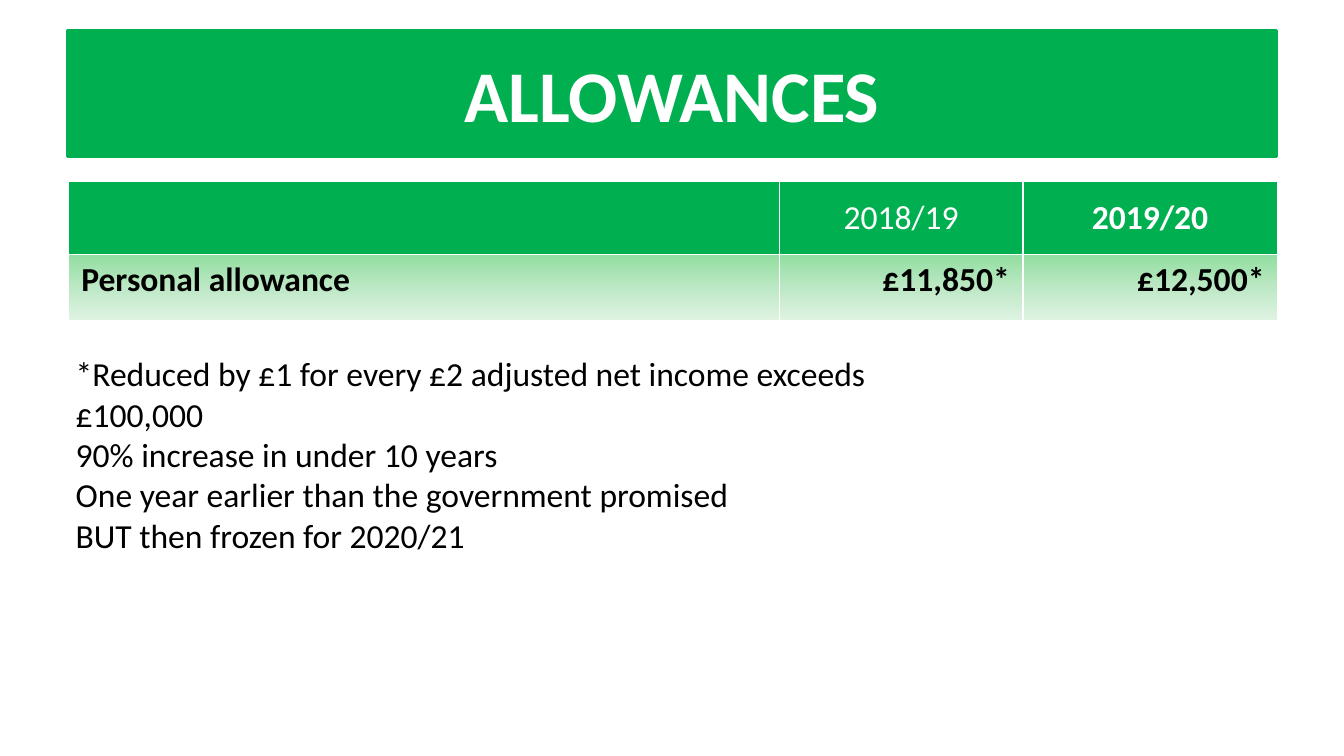
from pptx import Presentation
from pptx import util as u
from pptx.dml.color import RGBColor
from pptx.enum import text
from pptx.oxml import parse_xml
from pptx.oxml.ns import nsdecls, qn

PX = 4572  # EMU in one px, 200 px to the inch
FONT = "Calibri"
COLORS = {
    "green": "00B050",
    "white": "FFFFFF",
    "black": "000000",
    "fade_top": "91DEA0",
    "fade_mid": "BDE8C5",
    "fade_end": "DFF3E3",
}
FADE = [(0, "fade_top"), (50, "fade_mid"), (100, "fade_end")]
LEFT, CENTER, RIGHT = (text.PP_ALIGN.LEFT, text.PP_ALIGN.CENTER,
                       text.PP_ALIGN.RIGHT)
MIDDLE, TOP = text.MSO_ANCHOR.MIDDLE, text.MSO_ANCHOR.TOP

COL_WIDTHS = [1058, 362, 379]
ROW_HEIGHTS = [109, 98]
# Each cell: words, bold, alignment
ALLOWANCES = [
    [("", False, CENTER), ("2018/19", False, CENTER), ("2019/20", True, CENTER)],
    [("Personal allowance", True, LEFT), ("£11,850*", True, RIGHT),
     ("£12,500*", True, RIGHT)],
]
NOTES = [
    "*Reduced by £1 for every £2 adjusted net income exceeds £100,000",
    "90% increase in under 10 years",
    "One year earlier than the government promised",
    "BUT then frozen for 2020/21",
]


def px(n):
    return u.Emu(n * PX)


def rgb(name):
    return RGBColor.from_string(COLORS[name])


def set_all(obj, values):
    for name, value in values.items():
        setattr(obj, name, value)


def write(p, words, size, color, bold=False, align=LEFT):
    p.alignment = align
    if words:
        r = p.add_run()
        r.text = words
        set_all(r.font, {"name": FONT, "size": u.Pt(size), "bold": bold})
        r.font.color.rgb = rgb(color)


def add_title(s, words):
    sp = s.shapes.title
    set_all(sp, {"left": px(100), "top": px(46), "width": px(1800),
                 "height": px(187)})
    # Slightly rounded banner outline
    sp.element.spPr.find(qn("a:xfrm")).addnext(parse_xml(
        f'<a:prstGeom {nsdecls("a")} prst="roundRect"><a:avLst>'
        '<a:gd name="adj" fmla="val 1500"/></a:avLst></a:prstGeom>'))
    sp.fill.solid()
    sp.fill.fore_color.rgb = rgb("green")
    sp.line.color.rgb = rgb("green")
    sp.line.width = u.Pt(1.5)
    sp.text_frame.vertical_anchor = MIDDLE
    write(sp.text_frame.paragraphs[0], words, 39, "white", True, CENTER)


def add_borders(cell):
    for side in "LRTB":
        cell._tc.get_or_add_tcPr().append(parse_xml(
            f'<a:ln{side} {nsdecls("a")} w="{u.Pt(1)}"><a:solidFill>'
            f'<a:srgbClr val="{COLORS["white"]}"/></a:solidFill></a:ln{side}>'))


def fill_fade(cell):
    stops = "".join(f'<a:gs pos="{pos * 1000}"><a:srgbClr val="{COLORS[c]}"/></a:gs>'
                    for pos, c in FADE)
    cell._tc.get_or_add_tcPr().append(parse_xml(
        f'<a:gradFill {nsdecls("a")} rotWithShape="1"><a:gsLst>{stops}</a:gsLst>'
        '<a:lin ang="5400000" scaled="0"/></a:gradFill>'))


def add_allowances(s):
    table = s.shapes.add_table(
        len(ROW_HEIGHTS), len(COL_WIDTHS), px(102), px(270),
        px(sum(COL_WIDTHS)), px(sum(ROW_HEIGHTS))).table
    for col, width in zip(table.columns, COL_WIDTHS):
        col.width = px(width)
    for i, (row, height) in enumerate(zip(table.rows, ROW_HEIGHTS)):
        row.height = px(height)
        header = i == 0
        for cell, (words, bold, align) in zip(row.cells, ALLOWANCES[i]):
            set_all(cell, {"margin_left": px(19), "margin_right": px(19),
                           "margin_top": px(7), "margin_bottom": px(7),
                           "vertical_anchor": MIDDLE if header else TOP})
            add_borders(cell)
            if header:
                cell.fill.solid()
                cell.fill.fore_color.rgb = rgb("green")
            else:
                fill_fade(cell)
            write(cell.text_frame.paragraphs[0], words, 18,
                  "white" if header else "black", bold, align)


def add_notes_text(s):
    tf = s.shapes.add_textbox(px(93), px(516), px(1360), px(324)).text_frame
    set_all(tf, {"word_wrap": True,
                 "auto_size": text.MSO_AUTO_SIZE.SHAPE_TO_FIT_TEXT})
    for i, words in enumerate(NOTES):
        p = tf.add_paragraph() if i else tf.paragraphs[0]
        write(p, words, 18, "black")


def main():
    prs = Presentation()
    set_all(prs, {"slide_width": px(2000), "slide_height": px(1125)})
    s = prs.slides.add_slide(prs.slide_layouts[5])
    add_title(s, "ALLOWANCES")
    add_allowances(s)
    add_notes_text(s)
    prs.save("out.pptx")


if __name__ == "__main__":
    main()
